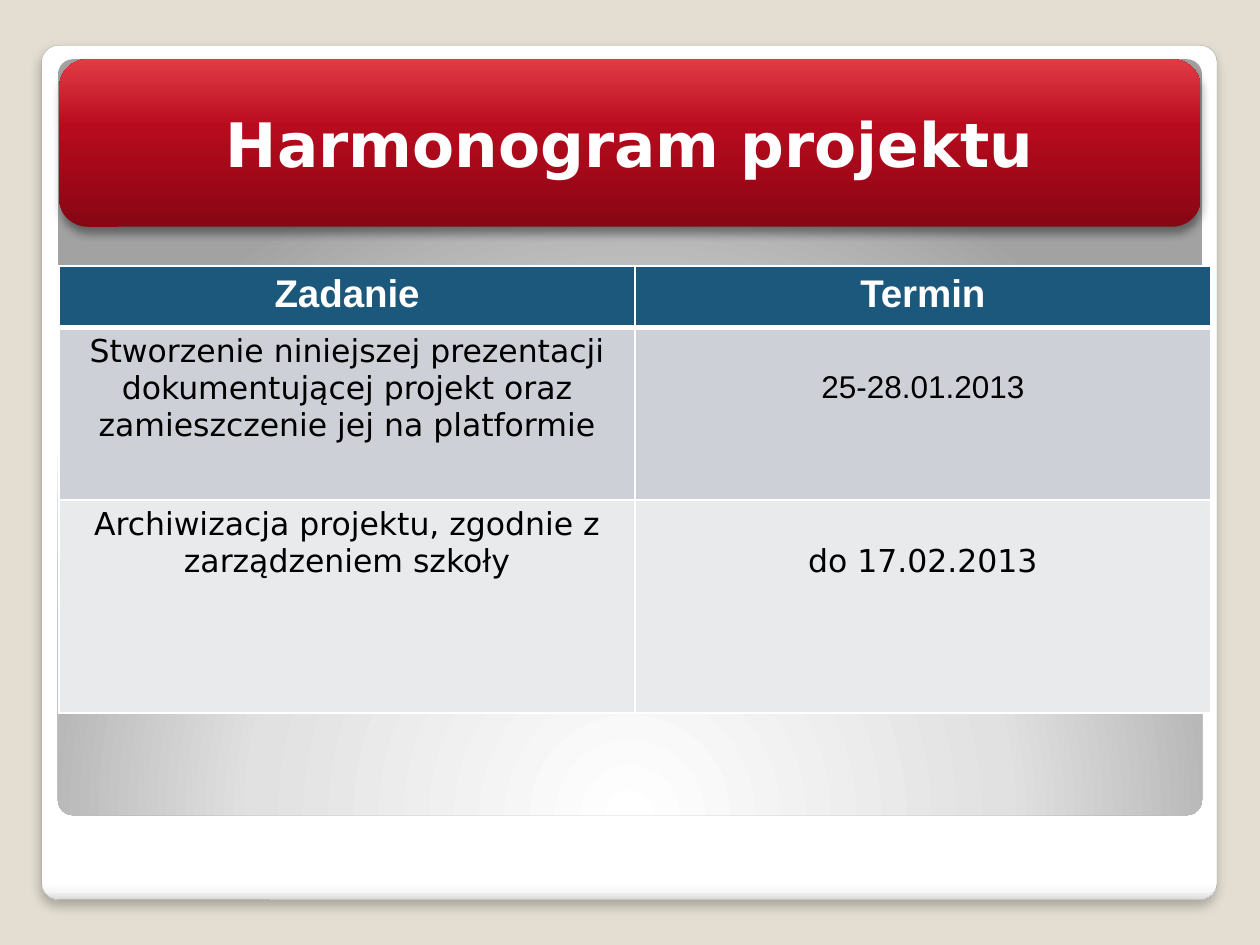
from dataclasses import dataclass

from lxml.etree import SubElement
from pptx import Presentation
from pptx.dml.color import RGBColor
from pptx.enum.shapes import MSO_SHAPE as Preset
from pptx.enum.text import MSO_ANCHOR as Anchor, MSO_AUTO_SIZE as AutoSize, PP_ALIGN as Align
from pptx.oxml.ns import qn
from pptx.util import Inches, Pt

SLIDE_W, SLIDE_H = Inches(10), Inches(7.5)
SANS, ARIAL = "DejaVu Sans", "Arial"
COLORS = {
    "backdrop": "E3DED1", "white": "FFFFFF", "black": "000000",
    "frame_edge": "A4A4A4", "frame_low": "F7F7F7", "frame_end": "DADADA",
    "panel_mid": "E1E1E1", "panel_end": "A2A2A2",
    "red_dark": "870614", "red": "B80B1E", "red_light": "E13C45",
    "header": "1B587C", "band_dark": "CDD1D7", "band_light": "E8EAEC",
}


@dataclass(frozen=True)
class Box:
    """Place and size in percent of the slide."""
    left: float
    top: float
    width: float
    height: float

    def emu(self) -> tuple[int, int, int, int]:
        return across(self.left), down(self.top), across(self.width), down(self.height)


@dataclass(frozen=True)
class Entry:
    """One table cell; lead is the number of lines left free above the text."""
    text: str
    font: str
    lead: int = 0


@dataclass(frozen=True)
class Row:
    height: float
    fill: str
    entries: tuple[Entry, Entry]
    color: str = "black"
    size: float = 18
    bold: bool = False
    rule_below: float = 1


FRAME = Box(3.3, 4.8, 93.3, 90.4)
PANEL = Box(4.6, 6.27, 90.8, 80)
BANNER = Box(4.7, 6.27, 90.6, 17.73)
SCHEDULE = Box(4.7, 28.13, 91.4, 47.33)
CARD_CORNER, BANNER_CORNER = 0.02, 0.17
LINE_HEIGHT = Inches(0.29)
CELL_MARGIN = Inches(0.05)

ROWS = (
    Row(6.53, "header", (Entry("Zadanie", ARIAL), Entry("Termin", ARIAL)),
        color="white", size=22, bold=True, rule_below=3),
    Row(18.27, "band_dark", (
        Entry("Stworzenie niniejszej prezentacji dokumentującej projekt oraz "
              "zamieszczenie jej na platformie", SANS),
        Entry("25-28.01.2013", ARIAL, lead=1))),
    Row(22.53, "band_light", (
        Entry("Archiwizacja projektu, zgodnie z zarządzeniem szkoły", SANS),
        Entry("do 17.02.2013", SANS, lead=1))),
)


def across(share: float) -> int:
    return round(SLIDE_W * share / 100)


def down(share: float) -> int:
    return round(SLIDE_H * share / 100)


def rgb(name: str) -> RGBColor:
    return RGBColor.from_string(COLORS[name])


def add_xml(parent, tag: str, **attributes):
    return SubElement(parent, qn(f"a:{tag}"), {key: str(val) for key, val in attributes.items()})


def add_gradient(shape, stops: dict[int, str], angle: int | None = None) -> None:
    """Fill linearly at the angle, or in circles around a point below the shape."""
    gradient = add_xml(shape._element.spPr, "gradFill", rotWithShape=1)
    stop_list = add_xml(gradient, "gsLst")
    for percent, name in stops.items():
        stop = add_xml(stop_list, "gs", pos=percent * 1000)
        add_xml(stop, "srgbClr", val=COLORS[name])
    if angle is None:
        circle = add_xml(gradient, "path", path="circle")
        add_xml(circle, "fillToRect", l=50000, t=175000, r=50000, b=-75000)
    else:
        add_xml(gradient, "lin", ang=angle * 60000, scaled=0)


def add_shadow(shape, opacity: int, blur: float, distance: float) -> None:
    effects = add_xml(shape._element.spPr, "effectLst")
    shadow = add_xml(effects, "outerShdw", blurRad=Pt(blur), dist=Pt(distance),
                     dir=90 * 60000, algn="t", rotWithShape=0)
    add_xml(add_xml(shadow, "srgbClr", val=COLORS["black"]), "alpha", val=opacity * 1000)


def add_card(slide, box: Box, corner: float):
    card = slide.shapes.add_shape(Preset.ROUNDED_RECTANGLE, *box.emu())
    card.adjustments[0] = corner
    return card


def format_text(frame, text: str, font: str, size: float, color: str, bold: bool) -> None:
    frame.text = text
    paragraph = frame.paragraphs[0]
    paragraph.alignment = Align.CENTER
    paragraph.font.name, paragraph.font.size, paragraph.font.bold = font, Pt(size), bold
    paragraph.font.color.rgb = rgb(color)


def add_backdrop(slide) -> None:
    slide.background.fill.solid()
    slide.background.fill.fore_color.rgb = rgb("backdrop")

    frame = add_card(slide, FRAME, CARD_CORNER)
    add_gradient(frame, {0: "white", 98: "white", 99: "frame_low", 100: "frame_end"}, 90)
    frame.line.color.rgb = rgb("frame_edge")
    frame.line.width = Pt(0.16)
    add_shadow(frame, opacity=25, blur=6, distance=4)

    panel = add_card(slide, PANEL, CARD_CORNER)
    add_gradient(panel, {0: "white", 55: "panel_mid", 100: "panel_end"})
    panel.line.fill.background()
    panel.shadow.inherit = False


def add_banner(slide, text: str) -> None:
    banner = add_card(slide, BANNER, BANNER_CORNER)
    add_gradient(banner, {0: "red_dark", 60: "red", 100: "red_light"}, 270)
    banner.line.fill.background()
    add_shadow(banner, opacity=40, blur=5.2, distance=3)

    # The title placeholder lies on the banner
    heading = slide.shapes.title
    slide.shapes._spTree.append(heading._element)
    heading.left, heading.top, heading.width, heading.height = BANNER.emu()
    heading.text_frame.auto_size = AutoSize.NONE
    heading.text_frame.vertical_anchor = Anchor.MIDDLE
    format_text(heading.text_frame, text, SANS, 35, "white", True)


def format_cell(cell, entry: Entry, row: Row, rule_above: float) -> None:
    widths = {"lnL": 1, "lnR": 1, "lnT": rule_above, "lnB": row.rule_below}
    for side, width in widths.items():
        border = add_xml(cell._tc.get_or_add_tcPr(), side, w=Pt(width))
        add_xml(add_xml(border, "solidFill"), "srgbClr", val=COLORS["white"])
    cell.fill.solid()
    cell.fill.fore_color.rgb = rgb(row.fill)
    cell.margin_top = CELL_MARGIN + entry.lead * LINE_HEIGHT
    format_text(cell.text_frame, entry.text, entry.font, row.size, row.color, row.bold)


def add_schedule(slide) -> None:
    table = slide.shapes.add_table(len(ROWS), 2, *SCHEDULE.emu()).table
    table.horz_banding = False
    rule_above = 1
    for index, row in enumerate(ROWS):
        table.rows[index].height = down(row.height)
        for cell, entry in zip(table.rows[index].cells, row.entries):
            format_cell(cell, entry, row, rule_above)
        rule_above = row.rule_below


def main() -> None:
    deck = Presentation()
    deck.slide_width, deck.slide_height = SLIDE_W, SLIDE_H
    slide = deck.slides.add_slide(deck.slide_layouts.get_by_name("Title Only"))
    add_backdrop(slide)
    add_banner(slide, "Harmonogram projektu")
    add_schedule(slide)
    deck.save("out.pptx")


if __name__ == "__main__":
    main()
